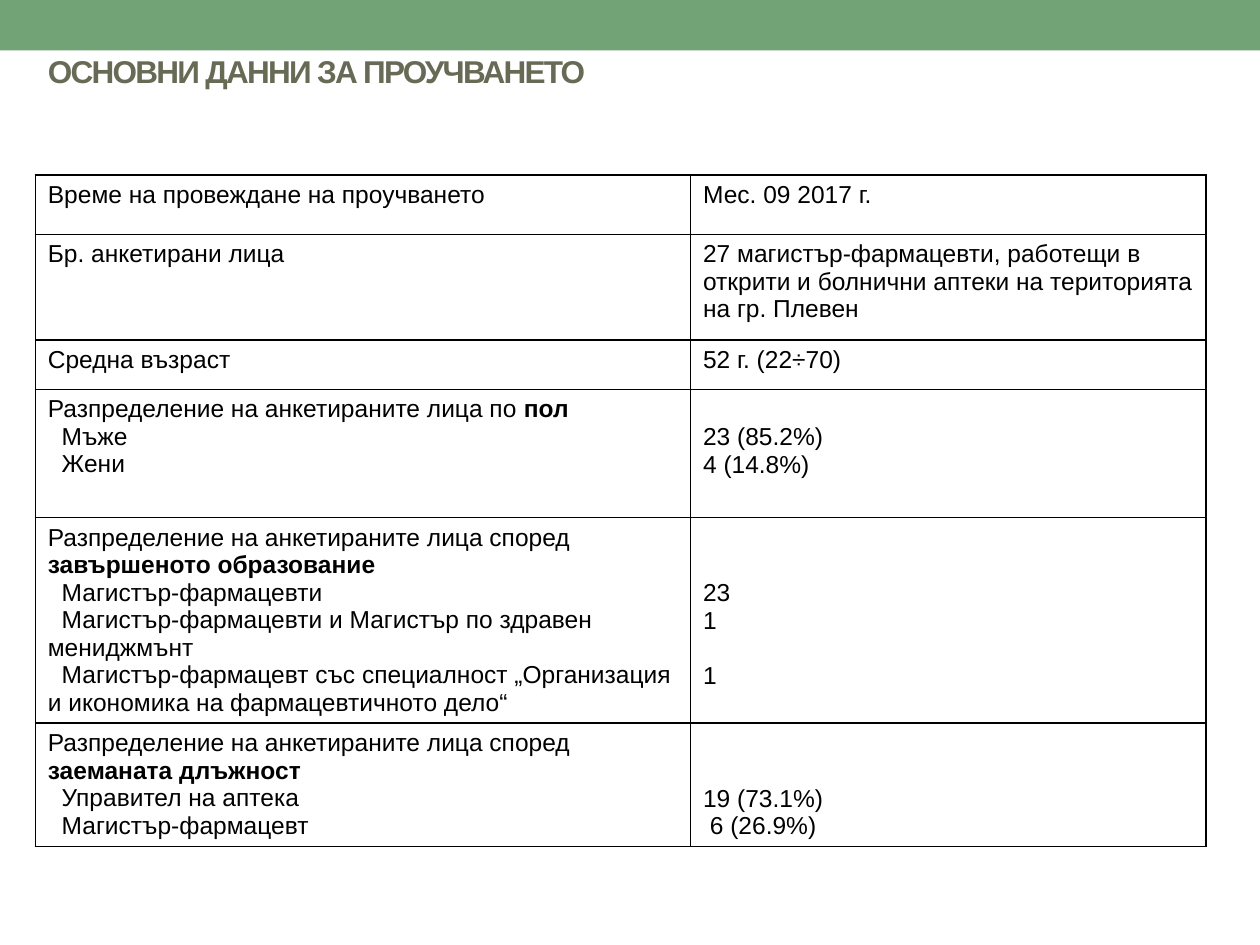
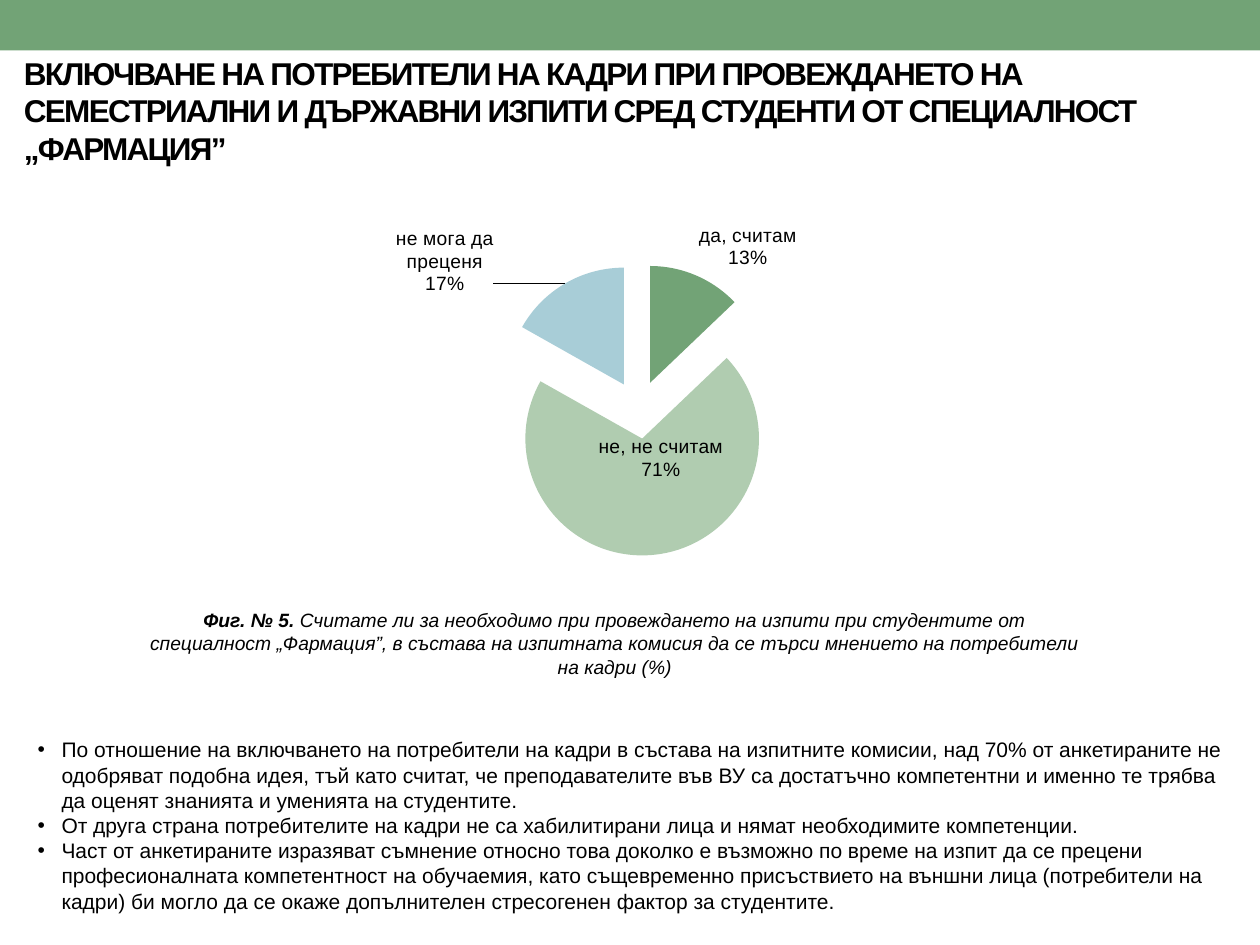
from pptx import Presentation
from pptx.chart.data import CategoryChartData
from pptx.dml.color import RGBColor
from pptx.enum.chart import XL_CHART_TYPE, XL_LABEL_POSITION
from pptx.enum.shapes import MSO_SHAPE
from pptx.enum.text import MSO_ANCHOR, MSO_AUTO_SIZE, PP_ALIGN
from pptx.oxml import parse_xml
from pptx.oxml.ns import nsdecls, qn
from pptx.util import Inches, Pt

GREEN = RGBColor(0x72, 0xA3, 0x76)
LIGHT_GREEN = RGBColor(0xB0, 0xCC, 0xB0)
LIGHT_BLUE = RGBColor(0xA8, 0xCD, 0xD7)
OLIVE = RGBColor(0x67, 0x6A, 0x55)
BLACK = RGBColor(0, 0, 0)
FONT = "Arial"


def set_font(font, size, color=BLACK, bold=False):
    font.name = FONT
    font.size = Pt(size)
    font.color.rgb = color
    font.bold = bold


def add_titled_slide(title, box, color, anchor, margin_top):
    s = prs.slides.add_slide(prs.slide_layouts[5])
    band = s.shapes.add_shape(MSO_SHAPE.RECTANGLE, 0, 0, prs.slide_width, Inches(0.4))
    band.shadow.inherit = False
    band.fill.solid()
    band.fill.fore_color.rgb = GREEN
    band.line.fill.background()
    sp = s.shapes.title
    sp.left, sp.top, sp.width, sp.height = [Inches(v) for v in box]
    tf = sp.text_frame
    tf.text = title
    tf.word_wrap = True
    tf.auto_size = MSO_AUTO_SIZE.NONE
    tf.vertical_anchor = anchor
    tf.margin_top = Inches(margin_top)
    p = tf.paragraphs[0]
    p.alignment = PP_ALIGN.LEFT
    set_font(p.font, 18, color, True)
    p.runs[0].font._element.set("spc", "-100")
    return s


prs = Presentation()
prs.slide_width, prs.slide_height = Inches(10), Inches(7.5)

# Slide 1: survey facts
s = add_titled_slide("ОСНОВНИ ДАННИ ЗА ПРОУЧВАНЕТО", (0.28, 0.29, 9.37, 0.79),
                     OLIVE, MSO_ANCHOR.TOP, 0.12)

# Row height, heading, bold end of heading, sub-items, values, lines above the values
rows = [
    (0.47, "Време на провеждане на проучването", "", [], ["Мес. 09 2017 г."], 0),
    (0.84, "Бр. анкетирани лица", "", [],
     ["27 магистър-фармацевти, работещи в открити и болнични аптеки "
      "на територията на гр. Плевен"], 0),
    (0.39, "Средна възраст", "", [], ["52 г. (22÷70)"], 0),
    (1.02, "Разпределение на анкетираните лица по ", "пол",
     ["Мъже", "Жени"], ["23 (85.2%)", "4 (14.8%)"], 1),
    (1.12, "Разпределение на анкетираните лица според ", "завършеното образование",
     ["Магистър-фармацевти",
      "Магистър-фармацевти и Магистър по здравен мениджмънт",
      "Магистър-фармацевт със специалност „Организация и икономика на "
      "фармацевтичното дело“"], ["23", "1", "1"], 2),
    (0.98, "Разпределение на анкетираните лица според ", "заеманата длъжност",
     ["Управител на аптека", "Магистър-фармацевт"], ["19 (73.1%)", " 6 (26.9%)"], 2),
]
LINE = 0.22
table = s.shapes.add_table(len(rows), 2, Inches(0.28), Inches(1.39),
                           Inches(9.29), Inches(4.82)).table
table.first_row = table.horz_banding = False
table.columns[0].width, table.columns[1].width = Inches(5.2), Inches(4.09)

for i, (height, heading, bold_end, items, values, skipped) in enumerate(rows):
    table.rows[i].height = Inches(height)
    label, value = table.cell(i, 0), table.cell(i, 1)
    label.text = "\n".join([heading] + items)
    value.text = "\n".join(values)
    value.margin_top = Inches(0.05 + skipped * LINE)
    for cell in (label, value):
        for p in cell.text_frame.paragraphs:
            set_font(p.font, 14)
        tcPr = cell._tc.get_or_add_tcPr()
        for side in "LRTB":
            tcPr.append(parse_xml(
                f'<a:ln{side} {nsdecls("a")} w="12700"><a:solidFill>'
                f'<a:srgbClr val="{BLACK}"/></a:solidFill></a:ln{side}>'))
        cell.fill.background()
    if bold_end:
        r = label.text_frame.paragraphs[0].add_run()
        r.text = bold_end
        r.font.bold = True
    for p in label.text_frame.paragraphs[1:]:
        p._p.get_or_add_pPr().set("indent", str(Inches(0.11)))

# The third education item starts one line lower, after a wrapped item
table.cell(4, 1).text_frame.paragraphs[2].space_before = Pt(16)

# Slide 2: opinion on including employers in exams
s = add_titled_slide(
    "ВКЛЮЧВАНЕ НА ПОТРЕБИТЕЛИ НА КАДРИ ПРИ ПРОВЕЖДАНЕТО НА СЕМЕСТРИАЛНИ И ДЪРЖАВНИ "
    "ИЗПИТИ СРЕД СТУДЕНТИ ОТ СПЕЦИАЛНОСТ „ФАРМАЦИЯ”",
    (0.09, 0.44, 9.72, 0.87), BLACK, MSO_ANCHOR.MIDDLE, 0.05)

data = CategoryChartData()
data.categories = ["да, считам", "не, не считам", "не мога да преценя"]
data.add_series("Series 1", (13, 71, 17))
chart = s.shapes.add_chart(XL_CHART_TYPE.PIE, Inches(1.69), Inches(1.47),
                           Inches(6.69), Inches(3.46), data).chart
chart.has_legend = chart.has_title = False
set_font(chart.font, 11)
plot = chart.plots[0]
plot.vary_by_categories = True
series = plot.series[0]
for i, color in enumerate((GREEN, LIGHT_GREEN, LIGHT_BLUE)):
    fill = series.points[i].format.fill
    fill.solid()
    fill.fore_color.rgb = color
series._element.find(qn("c:dPt")).addprevious(
    parse_xml(f'<c:explosion {nsdecls("c")} val="25"/>'))

# The rounded values add up to 101, so the labels show them with a percent sign
labels = series.data_labels
set_font(labels.font, 11)
labels.number_format, labels.number_format_is_linked = '0"%"', False
labels.position = XL_LABEL_POSITION.OUTSIDE_END
labels.show_category_name = labels.show_value = True
labels.show_percentage = False
dLbls = labels._element
dLbls.find(qn("c:showBubbleSize")).addnext(
    parse_xml(f'<c:separator {nsdecls("c")}>\n</c:separator>'))
leader = dLbls.find(qn("c:showLeaderLines"))
if leader is None:
    leader = parse_xml(f'<c:showLeaderLines {nsdecls("c")}/>')
    dLbls.find(qn("c:separator")).addnext(leader)
leader.set("val", "1")

# Labels moved from their default places, as shares of the chart size
for n, (idx, dx, dy) in enumerate([(1, -0.07, -0.29), (2, -0.08, 0.04)]):
    dLbls.insert(n, parse_xml(
        f'<c:dLbl {nsdecls("c")}><c:idx val="{idx}"/><c:layout><c:manualLayout>'
        f'<c:x val="{dx}"/><c:y val="{dy}"/></c:manualLayout></c:layout>'
        '<c:numFmt formatCode="0&quot;%&quot;" sourceLinked="0"/>'
        '<c:dLblPos val="outEnd"/><c:showLegendKey val="0"/><c:showVal val="1"/>'
        '<c:showCatName val="1"/><c:showSerName val="0"/><c:showPercent val="0"/>'
        '<c:showBubbleSize val="0"/><c:separator>\n</c:separator></c:dLbl>'))

plot_area = chart._chartSpace.chart.plotArea
for old in plot_area.findall(qn("c:layout")):
    plot_area.remove(old)
plot_area.insert(0, parse_xml(
    f'<c:layout {nsdecls("c")}><c:manualLayout><c:layoutTarget val="inner"/>'
    '<c:xMode val="edge"/><c:yMode val="edge"/><c:x val="0.33"/><c:y val="0.18"/>'
    '<c:w val="0.35"/><c:h val="0.67"/></c:manualLayout></c:layout>'))

tf = s.shapes.add_textbox(Inches(1.06), Inches(4.77), Inches(7.64), Inches(0.71)).text_frame
tf.word_wrap = True
p = tf.paragraphs[0]
p.alignment = PP_ALIGN.CENTER
p.space_after = Pt(10)
p.line_spacing = 1.03
set_font(p.font, 11)
p.font.italic = True
r = p.add_run()
r.text = "Фиг. № 5."
r.font.bold = True
p.add_run().text = (
    " Считате ли за необходимо при провеждането на изпити при студентите от специалност "
    "„Фармация”, в състава на изпитната комисия да се търси мнението на потребители "
    "на кадри (%)")

findings = [
    "По отношение на включването на потребители на кадри в състава на изпитните комисии, "
    "над 70% от анкетираните не одобряват подобна идея, тъй като считат, че преподавателите "
    "във ВУ са достатъчно компетентни и именно те трябва да оценят знанията и уменията "
    "на студентите.",
    "От друга страна потребителите на кадри не са хабилитирани лица и нямат необходимите "
    "компетенции.",
    "Част от анкетираните изразяват съмнение относно това доколко е възможно по време на "
    "изпит да се прецени професионалната компетентност на обучаемия, като същевременно "
    "присъствието на външни лица (потребители на кадри) би могло да се окаже допълнителен "
    "стресогенен фактор за студентите.",
]
tf = s.shapes.add_textbox(Inches(0.2), Inches(5.8), Inches(9.63), Inches(1.51)).text_frame
tf.word_wrap = True
tf.auto_size = MSO_AUTO_SIZE.SHAPE_TO_FIT_TEXT
tf.text = "\n".join(findings)
for p in tf.paragraphs:
    set_font(p.font, 12)
    pPr = p._p.get_or_add_pPr()
    pPr.set("marL", str(Inches(0.19)))
    pPr.set("indent", str(Inches(-0.19)))
    for bullet in (f'buFont {nsdecls("a")} typeface="{FONT}"',
                   f'buChar {nsdecls("a")} char="•"'):
        pPr.insert_element_before(parse_xml(f"<a:{bullet}/>"),
                                  "a:tabLst", "a:defRPr", "a:extLst")

prs.save("out.pptx")
